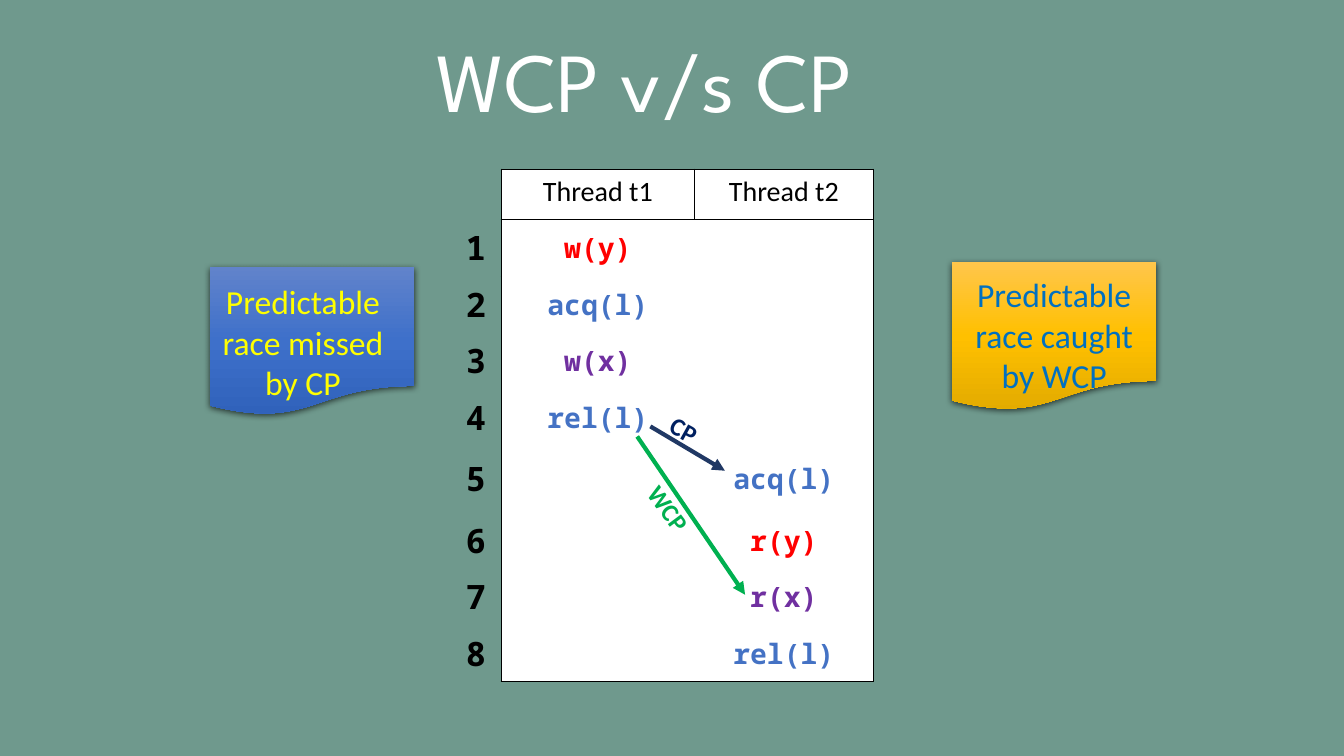
from copy import deepcopy

from lxml import etree
from pptx import Presentation
from pptx import util as u
from pptx.dml.color import RGBColor
from pptx.enum import shapes, text
from pptx.oxml import parse_xml
from pptx.oxml.ns import nsdecls, qn

MONO = "Noto Sans Mono"
BLUE, RED, PURPLE = "4472C4", "FF0000", "7030A0"
NO_STYLE = "{2D5ABB26-0587-4C30-8999-92F81FD0307C}"


def set_text(frame, wording, size, font, color, bold=False, align=text.PP_ALIGN.CENTER):
    frame.text = wording
    paragraph = frame.paragraphs[0]
    paragraph.alignment = align
    paragraph.font.size = u.Pt(size)
    paragraph.font.name = font
    paragraph.font.bold = bold
    paragraph.font.color.rgb = RGBColor.from_string(color)


def frame_cell(cell, sides):
    """Fill a cell white and draw thin black borders on the given sides, in L, R, T, B order."""
    for side in sides:
        cell._tc.get_or_add_tcPr().append(parse_xml(
            f'<a:ln{side} {nsdecls("a")} w="12700"><a:solidFill>'
            f'<a:srgbClr val="000000"/></a:solidFill></a:ln{side}>'))
    cell.fill.solid()
    cell.fill.fore_color.rgb = RGBColor.from_string("FFFFFF")


presentation = Presentation()
presentation.slide_width = u.Inches(13.33)
presentation.slide_height = u.Inches(7.5)
slide = presentation.slides.add_slide(presentation.slide_layouts[5])
slide.background.fill.solid()
slide.background.fill.fore_color.rgb = RGBColor.from_string("6F998D")

# Numbered grid with the thread headings, then the events on top of it
event_heights = [0.56] * 4 + [0.66] + [0.56] * 3
grids = [
    (4.47, 1.68, [0.5, 1.92, 1.77], [0.5] + event_heights),
    (4.97, 2.18, [1.92, 1.77], event_heights),
]
tables = []
for left, top, widths, heights in grids:
    graphic = slide.shapes.add_table(
        len(heights), len(widths), u.Inches(left), u.Inches(top),
        u.Inches(sum(widths)), u.Inches(sum(heights)))
    table = graphic.table
    table.first_row = table.horz_banding = False
    table._tbl.tblPr.find(qn("a:tableStyleId")).text = NO_STYLE
    for column, width in zip(table.columns, widths):
        column.width = u.Inches(width)
    for row, height in zip(table.rows, heights):
        row.height = u.Inches(height)
    tables.append(table)
numbered, events = tables

for column, side in enumerate("LR"):
    heading = numbered.cell(0, column + 1)
    set_text(heading.text_frame, f"Thread t{column + 1}", 20, "Calibri", "000000")
    frame_cell(heading, side + "TB")

steps = [
    (0, "w(y)", RED), (0, "acq(l)", BLUE), (0, "w(x)", PURPLE), (0, "rel(l)", BLUE),
    (1, "acq(l)", BLUE), (1, "r(y)", RED), (1, "r(x)", PURPLE), (1, "rel(l)", BLUE),
]
for row, (thread, wording, color) in enumerate(steps):
    number = numbered.cell(row + 1, 0)
    event = events.cell(row, thread)
    set_text(number.text_frame, str(row + 1), 24, MONO, "000000", True)
    set_text(event.text_frame, wording, 20, MONO, color, True)
    number.vertical_anchor = event.vertical_anchor = text.MSO_ANCHOR.MIDDLE
    edge = {0: "T", len(steps) - 1: "B"}.get(row, "")
    for column, side in enumerate("LR"):
        frame_cell(numbered.cell(row + 1, column + 1), side + edge)
        frame_cell(events.cell(row, column), side + edge)

title = slide.shapes.title
title.left, title.top = u.Inches(0.64), u.Inches(0.12)
title.width, title.height = u.Inches(11.5), u.Inches(1.45)
set_text(title.text_frame, "WCP v/s CP", 60, "League Spartan", "FFFFFF")
title.text_frame.paragraphs[0].line_spacing = 0.9
title.text_frame.vertical_anchor = text.MSO_ANCHOR.MIDDLE
title.text_frame.auto_size = text.MSO_AUTO_SIZE.NONE

# Notes on either side
notes = [
    (2.08, 2.65, 2.06, 2.74, "Predictable race missed by CP", "FFFF00",
     ["6183CB", "3E70CA", "3062BB"]),
    (9.44, 2.6, 9.51, 2.67, "Predictable race caught by WCP", "0070C0",
     ["FFC64B", "FFC000", "E3AB00"]),
]
for left, top, text_left, text_top, wording, color, gradient in notes:
    group = slide.shapes.add_group_shape()
    note = group.shapes.add_shape(
        shapes.MSO_SHAPE.FLOWCHART_DOCUMENT, u.Inches(left), u.Inches(top),
        u.Inches(2.03), u.Inches(1.47))
    note.line.fill.background()
    note.fill.gradient()
    note.fill.gradient_angle = 270
    stop_list = note._element.spPr.find(".//" + qn("a:gsLst"))
    stop_list.append(deepcopy(stop_list[0]))
    for stop, position, shade in zip(note.fill.gradient_stops, [0, 0.5, 1], gradient):
        stop.position = position
        stop.color.rgb = RGBColor.from_string(shade)
    note.shadow.inherit = False
    note._element.spPr.find(qn("a:effectLst")).append(parse_xml(
        f'<a:outerShdw {nsdecls("a")} blurRad="57150" dist="19050" dir="5400000" '
        'algn="ctr" rotWithShape="0"><a:srgbClr val="000000"><a:alpha val="63000"/>'
        '</a:srgbClr></a:outerShdw>'))
    caption = group.shapes.add_textbox(
        u.Inches(text_left), u.Inches(text_top), u.Inches(1.89), u.Inches(1.31))
    caption.text_frame.word_wrap = True
    caption.text_frame.auto_size = text.MSO_AUTO_SIZE.SHAPE_TO_FIT_TEXT
    set_text(caption.text_frame, wording, 24, "Calibri", color)

# Ordering arrows with their labels
arrows = [
    ("CP", (6.45, 4.23, 7.19, 4.67), "203864", (6.55, 4.08, 0.53, 0.4), 29.2, "002060"),
    ("WCP", (6.32, 4.33, 7.39, 5.9), "00B050", (6.28, 4.86, 0.72, 0.4), 53.5, "00B050"),
]
for wording, ends, line_color, box, angle, color in arrows:
    group = slide.shapes.add_group_shape()
    arrow = group.shapes.add_connector(
        shapes.MSO_CONNECTOR.STRAIGHT, *[u.Inches(value) for value in ends])
    arrow.line.width = u.Pt(3)
    arrow.line.color.rgb = RGBColor.from_string(line_color)
    etree.SubElement(arrow.line._get_or_add_ln(), qn("a:tailEnd"), type="triangle")
    etree.SubElement(arrow._element.spPr, qn("a:effectLst"))
    label = group.shapes.add_textbox(*[u.Inches(value) for value in box])
    label.rotation = angle
    label.text_frame.word_wrap = False
    label.text_frame.auto_size = text.MSO_AUTO_SIZE.SHAPE_TO_FIT_TEXT
    set_text(label.text_frame, wording, 18, "Calibri", color, True, text.PP_ALIGN.LEFT)

presentation.save("out.pptx")
